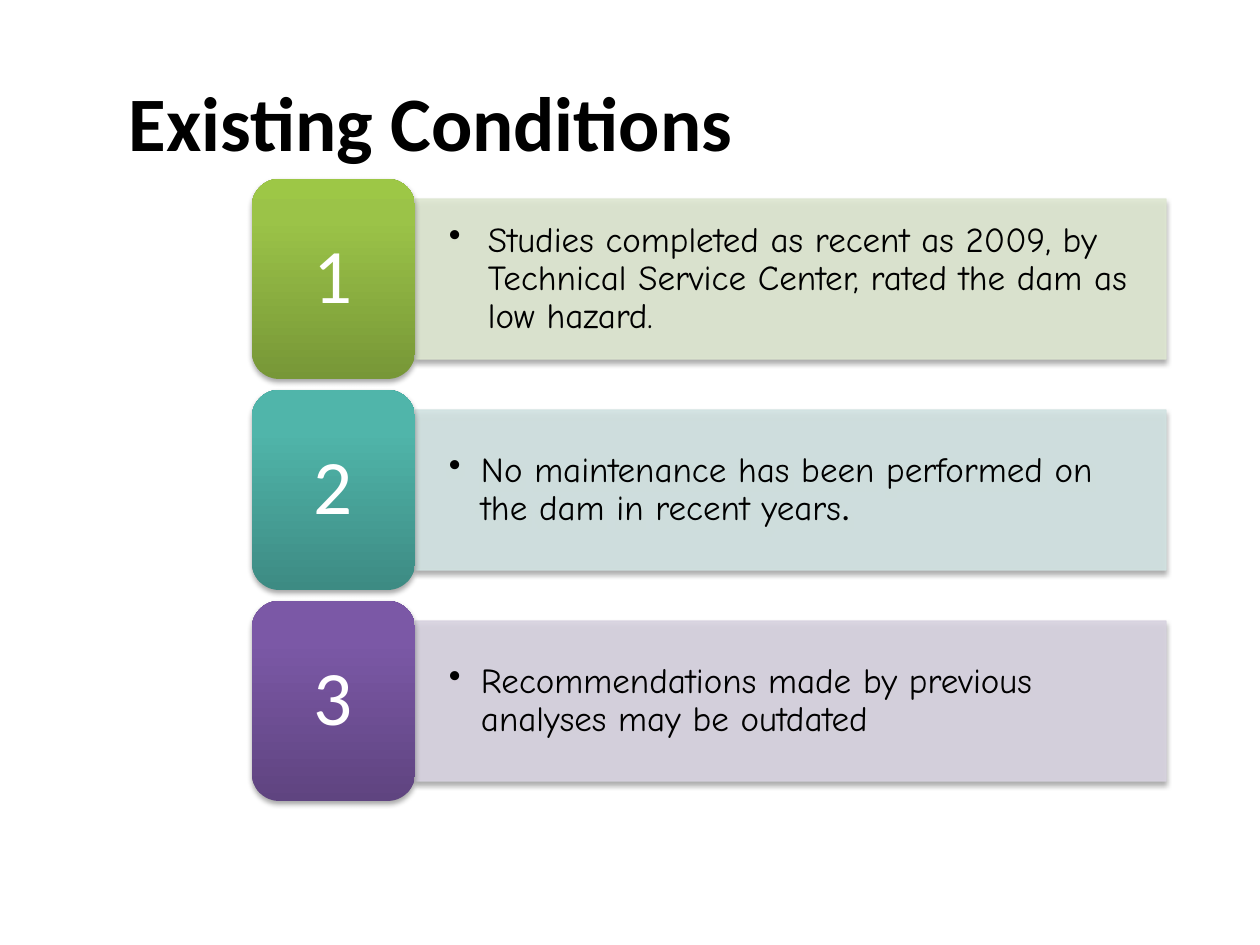
from lxml import etree
from pptx import Presentation
from pptx.dml.color import RGBColor
from pptx.enum.shapes import MSO_SHAPE
from pptx.enum.text import MSO_ANCHOR, PP_ALIGN
from pptx.oxml import parse_xml
from pptx.oxml.ns import nsdecls, qn
from pptx.util import Pt

RECTANGLE, ROUNDED = MSO_SHAPE.RECTANGLE, MSO_SHAPE.ROUNDED_RECTANGLE
MIDDLE = MSO_ANCHOR.MIDDLE
LEFT, CENTER = PP_ALIGN.LEFT, PP_ALIGN.CENTER

HEADING, BODY = "Calibri", "Comic Neue"
COLORS = {"black": "000000", "white": "FFFFFF"}
TITLE = "Existing Conditions"
# Text runs with fonts, hanging indent in px, bar colour, tile gradient from bottom to top
CONDITIONS = [
    {"runs": [("Studies completed as recent as 2009, by Technical Service Center, "
               "rated the dam as low hazard.", BODY)],
     "indent": 39, "bar": "DEE7D1", "tile": ["779737", "9BC348", "9DC746"]},
    {"runs": [("No maintenance has been performed on the dam in recent years", BODY),
              (".", HEADING)],
     "indent": 32, "bar": "D2E3E2", "tile": ["3D8B83", "50B5AA", "4EB8AC"]},
    {"runs": [("Recommendations made by previous analyses may be outdated", BODY)],
     "indent": 32, "bar": "D8D3E0", "tile": ["5F4480", "7B58A6", "7C57A8"]},
]
GRADIENT_STOPS = [0, 80, 100]

TITLE_BOX = (116, 42, 1113, 157)
TILE_LEFT, TILE_TOP, TILE_WIDTH, TILE_HEIGHT = 252, 179, 163, 200
BAR_WIDTH, BAR_HEIGHT = 751, 160
ROW_PITCH = 211


def px(length):
    return round(length * 914400 / 126)


def style_run(run, font_name, size, color):
    run.font.name = font_name
    run.font.size = Pt(size)
    run.font.color.rgb = RGBColor.from_string(COLORS[color])


def set_alpha(fill, percent):
    color = fill._xPr.find(qn("a:solidFill"))[0]
    etree.SubElement(color, qn("a:alpha"), val=str(percent * 1000))


def add_shadow(shape):
    shape.shadow.inherit = False
    effects = shape._element.spPr.find(qn("a:effectLst"))
    effects.append(parse_xml(
        f'<a:outerShdw {nsdecls("a")} blurRad="{Pt(3.1)}" dist="{Pt(1.8)}" '
        'dir="5400000" rotWithShape="0"><a:srgbClr val="000000">'
        '<a:alpha val="35000"/></a:srgbClr></a:outerShdw>'))


def set_gradient(shape, colors):
    """Fill a shape with colours that run from its bottom to its top."""
    stops = "".join(
        f'<a:gs pos="{position * 1000}"><a:srgbClr val="{color}"/></a:gs>'
        for position, color in zip(GRADIENT_STOPS, colors))
    gradient = parse_xml(
        f'<a:gradFill {nsdecls("a")} rotWithShape="1"><a:gsLst>{stops}</a:gsLst>'
        '<a:lin ang="16200000" scaled="0"/></a:gradFill>')
    shape._element.spPr.find(qn("a:prstGeom")).addnext(gradient)


def add_block(slide, kind, box, margins):
    shape = slide.shapes.add_shape(kind, *map(px, box))
    frame = shape.text_frame
    frame.word_wrap = True
    frame.vertical_anchor = MIDDLE
    frame.margin_left = frame.margin_right = px(margins[0])
    frame.margin_top = frame.margin_bottom = px(margins[1])
    add_shadow(shape)
    return shape


def add_bar(slide, top, condition):
    box = (TILE_LEFT + TILE_WIDTH, top, BAR_WIDTH, BAR_HEIGHT)
    bar = add_block(slide, RECTANGLE, box, (34, 18))
    color = RGBColor.from_string(condition["bar"])
    bar.fill.solid()
    bar.fill.fore_color.rgb = color
    bar.line.color.rgb = color
    bar.line.width = Pt(0.75)
    set_alpha(bar.fill, 90)
    set_alpha(bar.line.fill, 90)

    paragraph = bar.text_frame.paragraphs[0]
    properties = paragraph._p.get_or_add_pPr()
    indent = px(condition["indent"])
    properties.set("marL", str(indent))
    properties.set("indent", str(-indent))
    etree.SubElement(properties, qn("a:buChar"), char="•")
    paragraph.alignment = LEFT
    paragraph.line_spacing = 0.9
    for text, font_name in condition["runs"]:
        run = paragraph.add_run()
        run.text = text
        style_run(run, font_name, 20, "black")


def add_tile(slide, top, number, colors):
    box = (TILE_LEFT, top, TILE_WIDTH, TILE_HEIGHT)
    tile = add_block(slide, ROUNDED, box, (23, 11))
    set_gradient(tile, colors)
    tile.line.fill.background()
    paragraph = tile.text_frame.paragraphs[0]
    paragraph.text = str(number)
    paragraph.alignment = CENTER
    paragraph.line_spacing = 0.9
    style_run(paragraph.runs[0], HEADING, 44, "white")


def add_title(slide):
    title = slide.shapes.title
    title.left, title.top, title.width, title.height = map(px, TITLE_BOX)
    title.text_frame.text = TITLE
    title.text_frame.vertical_anchor = MIDDLE
    paragraph = title.text_frame.paragraphs[0]
    paragraph.alignment = LEFT
    style_run(paragraph.runs[0], HEADING, 44, "black")
    paragraph.runs[0].font.bold = True


def main():
    presentation = Presentation()
    presentation.slide_width, presentation.slide_height = px(1260), px(945)
    slide = presentation.slides.add_slide(presentation.slide_layouts[5])
    add_title(slide)
    for row, condition in enumerate(CONDITIONS):
        top = TILE_TOP + row * ROW_PITCH
        add_bar(slide, top + (TILE_HEIGHT - BAR_HEIGHT) // 2, condition)
        add_tile(slide, top, row + 1, condition["tile"])
    presentation.save("out.pptx")


if __name__ == "__main__":
    main()
